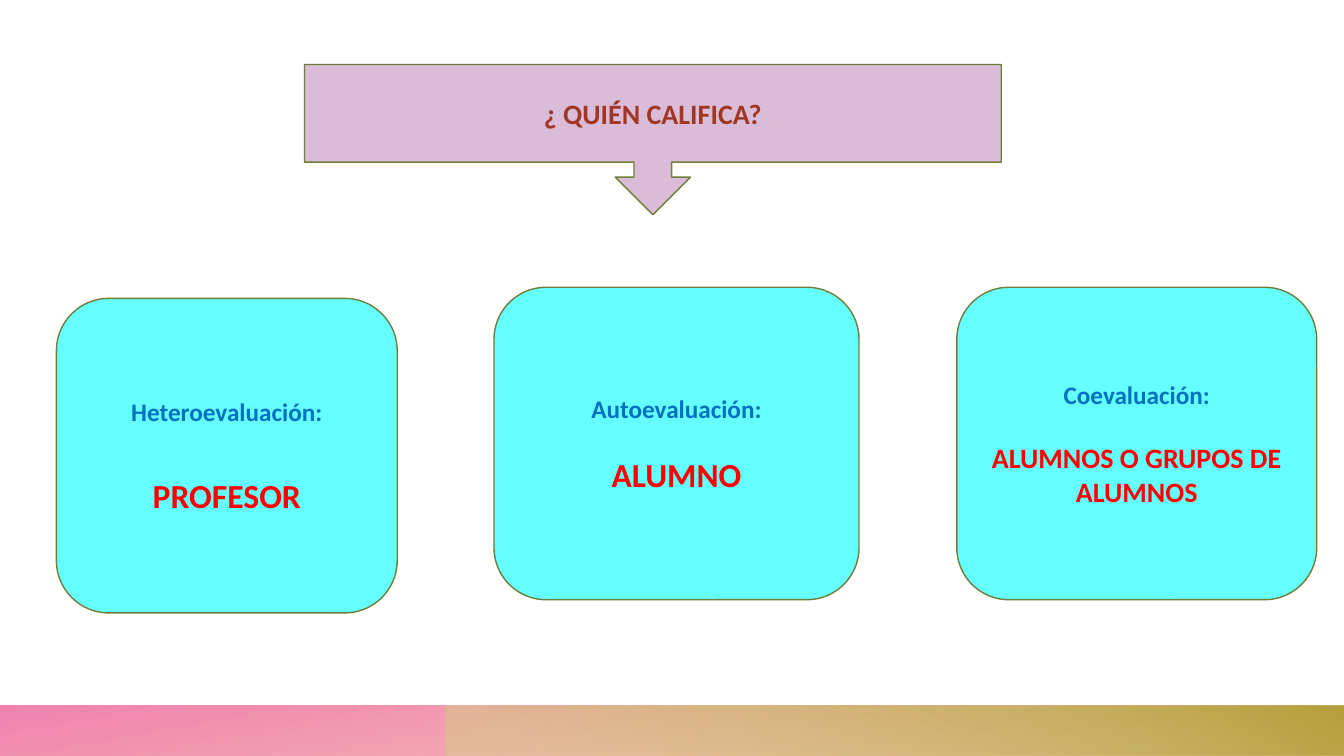
import pptx
import pptx.util
import pptx.dml.color
import pptx.enum.shapes
import pptx.enum.text
import pptx.oxml
import pptx.oxml.ns

Pt = pptx.util.Pt
RGB = pptx.dml.color.RGBColor
SHAPE = pptx.enum.shapes.MSO_SHAPE
SLIDE_W, SLIDE_H = pptx.util.Inches(13.33), pptx.util.Inches(7.5)

CORAL, PINK = RGB(0xEB, 0x4E, 0x4F), RGB(0xEE, 0x6E, 0xA5)
SAND, OLIVE = RGB(0xD7, 0xC9, 0x86), RGB(0xB6, 0xA0, 0x3C)
LILAC, CYAN = RGB(0xDA, 0xBC, 0xD8), RGB(0x66, 0xFF, 0xFF)
EDGE, BRICK = RGB(0x6D, 0x7D, 0x3A), RGB(0xA0, 0x36, 0x24)
BLUE, RED = RGB(0x00, 0x70, 0xC0), RGB(0xFF, 0x00, 0x00)

FONT = {"name": "Calibri", "bold": True}

# Positions are percentages of the slide: left, top, width, height
FOOTER_TOP, FOOTER_H = 93.33, 6.67
FOOTER_SPLIT = 33.16
QUESTION_AT = (22.66, 8.53, 51.84, 19.87)

# Position, heading, evaluator, evaluator size, gap between them in points
CARDS = [
    ((4.2, 39.47, 25.36, 41.6), "Heteroevaluación:", "PROFESOR", 24, 34),
    ((36.76, 38, 27.16, 41.33), "Autoevaluación:", "ALUMNO", 24, 22),
    ((71.19, 38, 26.78, 41.33), "Coevaluación:",
     "ALUMNOS O GRUPOS DE ALUMNOS", 20, 22),
]


def add_shape(slide, kind, at):
    left, top, width, height = at
    sp = slide.shapes.add_shape(
        kind, int(SLIDE_W * left / 100), int(SLIDE_H * top / 100),
        int(SLIDE_W * width / 100), int(SLIDE_H * height / 100))
    sp.shadow.inherit = False
    return sp


def add_bar(slide, at, stops, angle, rotation=0):
    """Mirrored bar; each stop is (position, colour, opacity in percent)."""
    sp = add_shape(slide, SHAPE.RECTANGLE, at)
    sp.rotation = rotation
    sp.element.spPr.xfrm.set("flipH", "1")
    sp.line.fill.background()
    sp.fill.gradient()
    sp.fill.gradient_angle = 360 - angle
    for stop, (position, colour, _) in zip(sp.fill.gradient_stops, stops):
        stop.position = position
        stop.color.rgb = colour
    colours = sp.element.spPr.iter(pptx.oxml.ns.qn("a:srgbClr"))
    for clr, (_, _, opacity) in zip(list(colours), stops):
        alpha = pptx.oxml.parse_xml(
            f'<a:alpha {pptx.oxml.ns.nsdecls("a")} val="{opacity * 1000}"/>')
        clr.append(alpha)


def add_panel(slide, kind, at, colour, lines):
    """Outlined panel; each line is (text, size, colour, space before)."""
    sp = add_shape(slide, kind, at)
    sp.fill.solid()
    sp.fill.fore_color.rgb = colour
    sp.line.color.rgb = EDGE
    sp.line.width = Pt(1)
    tf = sp.text_frame
    tf.word_wrap = True
    tf.vertical_anchor = pptx.enum.text.MSO_ANCHOR.MIDDLE
    for i, (text, size, text_colour, gap) in enumerate(lines):
        p = tf.add_paragraph() if i else tf.paragraphs[0]
        p.alignment = pptx.enum.text.PP_ALIGN.CENTER
        p.space_before = Pt(gap)
        r = p.add_run()
        r.text = text
        for name, value in {**FONT, "size": Pt(size)}.items():
            setattr(r.font, name, value)
        r.font.color.rgb = text_colour


def main():
    prs = pptx.Presentation()
    prs.slide_width, prs.slide_height = SLIDE_W, SLIDE_H
    slide = prs.slides.add_slide(prs.slide_layouts[6])

    # Footer bars
    add_bar(slide, (0, FOOTER_TOP, 100, FOOTER_H),
            [(0.14, CORAL, 28), (1, PINK, 85)], 100, rotation=180)
    add_bar(slide, (FOOTER_SPLIT, FOOTER_TOP, 100 - FOOTER_SPLIT, FOOTER_H),
            [(0.09, SAND, 55), (0.99, OLIVE, 100)], 240)

    # Question
    add_panel(slide, SHAPE.DOWN_ARROW_CALLOUT, QUESTION_AT, LILAC,
              [("¿ QUIÉN CALIFICA?", 20, BRICK, 0)])

    # Kinds of evaluation
    for at, heading, evaluator, size, gap in CARDS:
        add_panel(slide, SHAPE.ROUNDED_RECTANGLE, at, CYAN,
                  [(heading, 18, BLUE, 0), (evaluator, size, RED, gap)])

    prs.save("out.pptx")


if __name__ == "__main__":
    main()
